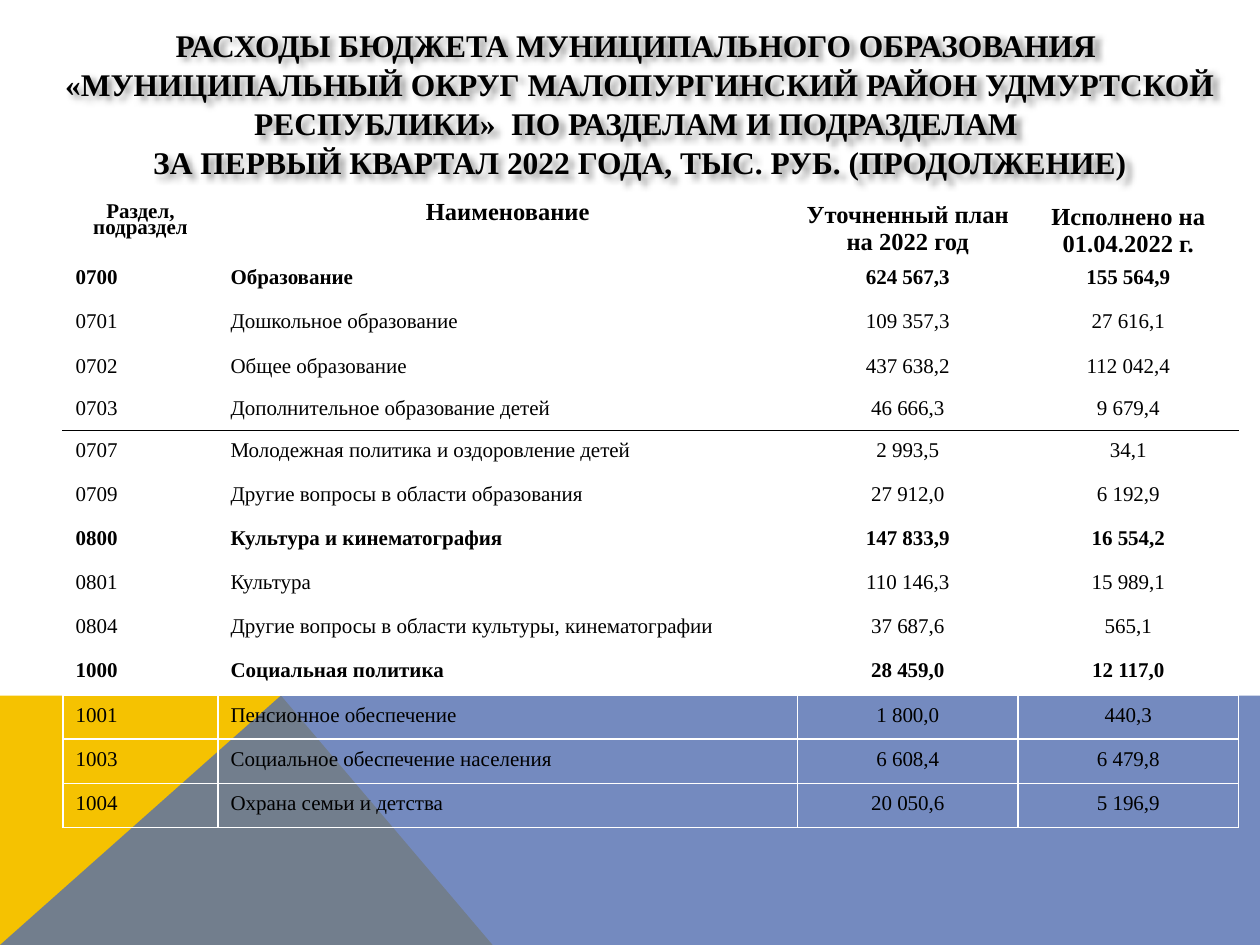
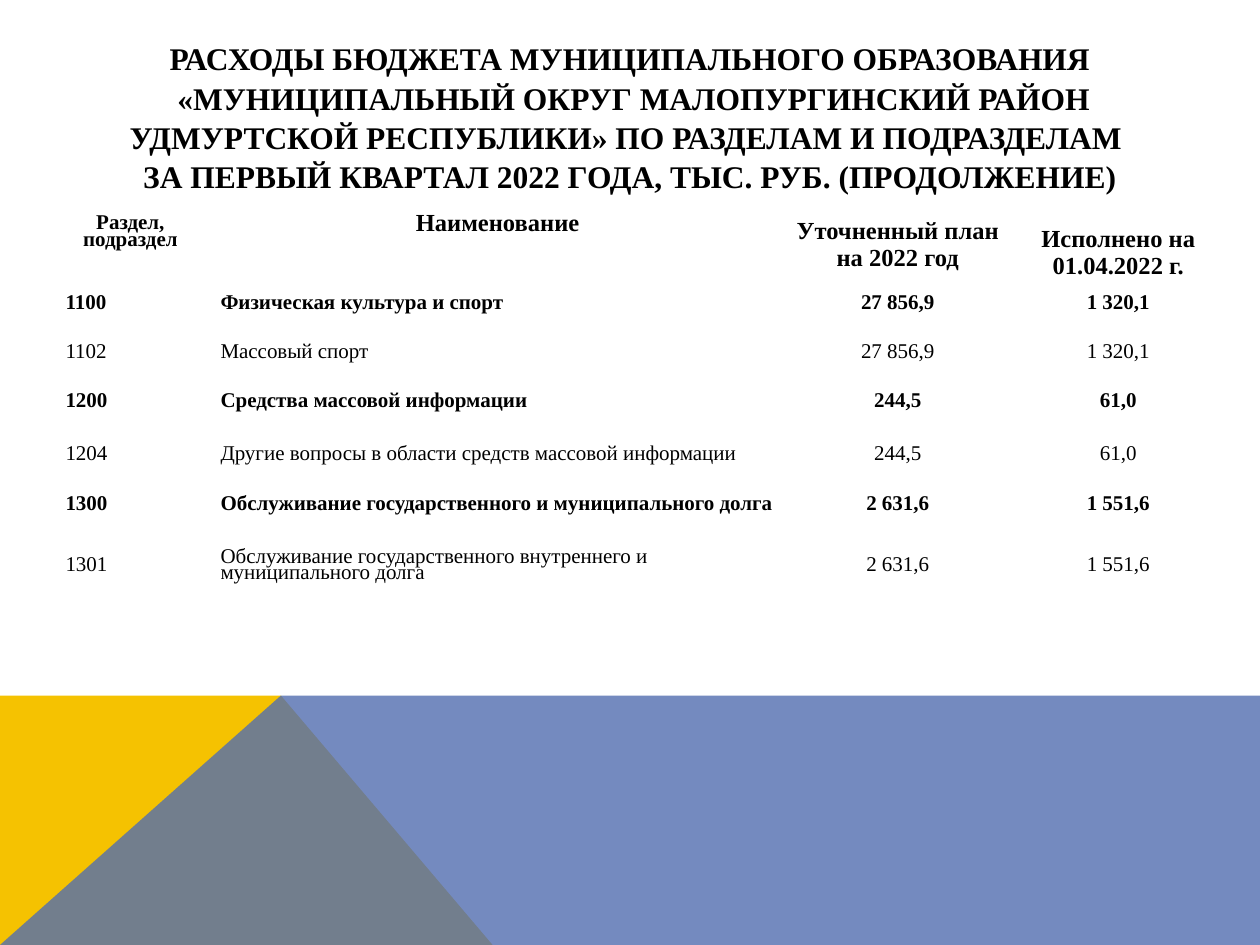
import dataclasses

import pptx
import pptx.dml.color
import pptx.enum.text
import pptx.oxml
import pptx.oxml.ns
import pptx.util
from pptx.util import Inches

ALIGN = pptx.enum.text.PP_ALIGN
ANCHOR = pptx.enum.text.MSO_ANCHOR


@dataclasses.dataclass(frozen=True)
class Theme:
    font: str = "Times New Roman"
    ink: str = "000000"
    paper: str = "FFFFFF"
    yellow: str = "F5C201"
    blue: str = "526DB0"
    blue_alpha: int = 80
    title_size: int = 18
    heading_size: int = 14
    body_size: int = 12
    title_spacing: float = 1.04
    tight_spacing: float = 0.7
    thin_line: int = 1
    thick_line: int = 3


THEME = Theme()
COLUMN_WIDTHS = (1.23, 4.6, 1.75, 1.75)

# Heading, type size, line spacing, anchor, whether the cell has margins
HEADINGS = (
    ("Раздел, подраздел", THEME.body_size, THEME.tight_spacing, ANCHOR.TOP, True),
    ("Наименование", THEME.heading_size, THEME.tight_spacing, ANCHOR.TOP, True),
    ("Уточненный план на 2022 год", THEME.heading_size, 1.0, ANCHOR.MIDDLE, False),
    ("Исполнено на 01.04.2022 г.", THEME.heading_size, 1.0, ANCHOR.BOTTOM, False),
)

SOCIAL_TITLE = (
    "РАСХОДЫ БЮДЖЕТА МУНИЦИПАЛЬНОГО ОБРАЗОВАНИЯ \v"
    "«МУНИЦИПАЛЬНЫЙ ОКРУГ МАЛОПУРГИНСКИЙ РАЙОН УДМУРТСКОЙ "
    "РЕСПУБЛИКИ»  ПО РАЗДЕЛАМ И ПОДРАЗДЕЛАМ \v"
    "ЗА ПЕРВЫЙ КВАРТАЛ 2022 ГОДА, ТЫС. РУБ. (ПРОДОЛЖЕНИЕ)"
)
SOCIAL_ROWS = (
    ("0700", "Образование", "624 567,3", "155 564,9"),
    ("0701", "Дошкольное образование", "109 357,3", "27 616,1"),
    ("0702", "Общее образование", "437 638,2", "112 042,4"),
    ("0703", "Дополнительное образование детей", "46 666,3", "9 679,4"),
    ("0707", "Молодежная политика и оздоровление детей", "2 993,5", "34,1"),
    ("0709", "Другие вопросы в области образования", "27 912,0", "6 192,9"),
    ("0800", "Культура и кинематография", "147 833,9", "16 554,2"),
    ("0801", "Культура", "110 146,3", "15 989,1"),
    ("0804", "Другие вопросы в области культуры, кинематографии", "37 687,6", "565,1"),
    ("1000", "Социальная политика", "28 459,0", "12 117,0"),
    ("1001", "Пенсионное обеспечение", "1 800,0", "440,3"),
    ("1003", "Социальное обеспечение населения", "6 608,4", "6 479,8"),
    ("1004", "Охрана семьи и детства", "20 050,6", "5 196,9"),
)
SOCIAL_HEIGHTS = (0.43,) + (0.35,) * 3 + (0.32,) + (0.35,) * 9

SPORT_TITLE = (
    "РАСХОДЫ БЮДЖЕТА МУНИЦИПАЛЬНОГО ОБРАЗОВАНИЯ\v"
    " «МУНИЦИПАЛЬНЫЙ ОКРУГ МАЛОПУРГИНСКИЙ РАЙОН УДМУРТСКОЙ "
    "РЕСПУБЛИКИ» ПО РАЗДЕЛАМ И ПОДРАЗДЕЛАМ \v"
    "ЗА ПЕРВЫЙ КВАРТАЛ 2022 ГОДА, ТЫС. РУБ. (ПРОДОЛЖЕНИЕ)"
)
SPORT_ROWS = (
    ("1100", "Физическая культура и спорт", "27 856,9", "1 320,1"),
    ("1102", "Массовый спорт", "27 856,9", "1 320,1"),
    ("1200", "Средства массовой информации", "244,5", "61,0"),
    ("1204", "Другие вопросы в области средств массовой информации", "244,5", "61,0"),
    ("1300", "Обслуживание государственного и муниципального долга", "2 631,6", "1 551,6"),
    ("1301", "Обслуживание государственного внутреннего и муниципального долга",
     "2 631,6", "1 551,6"),
)
SPORT_HEIGHTS = (0.55, 0.39, 0.39, 0.39, 0.45, 0.35, 0.61)


def rgb(color):
    return pptx.dml.color.RGBColor.from_string(color)


def parse_element(xml):
    return pptx.oxml.parse_xml(xml.replace(">", f' {pptx.oxml.ns.nsdecls("a")}>', 1))


def style_paragraph(para, size, bold, align, spacing):
    para.alignment = align
    para.line_spacing = spacing
    para.font.name = THEME.font
    para.font.size = pptx.util.Pt(size)
    para.font.bold = bold
    para.font.color.rgb = rgb(THEME.ink)


def add_polygon(page, points, color, alpha=100):
    points = [(Inches(x), Inches(y)) for x, y in points]
    builder = page.shapes.build_freeform(*points[0])
    builder.add_line_segments(points[1:], close=True)
    shape = builder.convert_to_shape()
    shape.shadow.inherit = False
    shape.line.fill.background()
    shape.fill.solid()
    shape.fill.fore_color.rgb = rgb(color)
    if alpha < 100:
        fill_color = shape.fill._xPr.find(".//" + pptx.oxml.ns.qn("a:srgbClr"))
        fill_color.append(parse_element(f'<a:alpha val="{alpha * 1000}"></a:alpha>'))


def add_band(page, box):
    """Yellow triangle under a translucent blue band."""
    left, top, width, height = box
    right, bottom = left + width, top + height
    peak = (left + 2.23, top)
    add_polygon(page, [(left, bottom), (left, top), peak, (left + 3.91, bottom)], THEME.yellow)
    add_polygon(page, [(left, bottom), peak, (right, top), (right, bottom)],
                THEME.blue, THEME.blue_alpha)


def add_title(page, box, text, shadow):
    title = page.shapes.add_textbox(*map(Inches, box))
    frame = title.text_frame
    frame.word_wrap = True
    frame.vertical_anchor = ANCHOR.MIDDLE
    para = frame.paragraphs[0]
    para.text = text
    style_paragraph(para, THEME.title_size, True, ALIGN.CENTER, THEME.title_spacing)
    if shadow:
        title.element.spPr.append(parse_element(
            '<a:effectLst><a:outerShdw blurRad="50800" dist="38100" dir="2700000" algn="tl">'
            f'<a:srgbClr val="{THEME.ink}"><a:alpha val="40000"/></a:srgbClr>'
            '</a:outerShdw></a:effectLst>'))


def set_borders(cell, top, bottom):
    """Each side is a (colour, points) pair; the left and right are thin and white."""
    side = (THEME.paper, THEME.thin_line)
    properties = cell._tc.get_or_add_tcPr()
    borders = (("lnL", side), ("lnR", side), ("lnT", top), ("lnB", bottom))
    for index, (tag, (color, points)) in enumerate(borders):
        properties.insert(index, parse_element(
            f'<a:{tag} w="{pptx.util.Pt(points)}"><a:solidFill><a:srgbClr val="{color}"/>'
            f'</a:solidFill></a:{tag}>'))


def fill_cell(cell, text, size, bold, align, spacing, anchor):
    cell.fill.background()
    cell.vertical_anchor = anchor
    para = cell.text_frame.paragraphs[0]
    para.text = text
    style_paragraph(para, size, bold, align, spacing)


def add_budget_table(page, corner, rows, heights, ruled_code=None):
    """Expense table; a black rule runs below the row with ruled_code."""
    size = (sum(COLUMN_WIDTHS), sum(heights))
    table = page.shapes.add_table(len(heights), len(COLUMN_WIDTHS),
                                  *map(Inches, corner + size)).table
    table.first_row = table.horz_banding = False
    for column, width in zip(table.columns, COLUMN_WIDTHS):
        column.width = Inches(width)
    for row, height in zip(table.rows, heights):
        row.height = Inches(height)

    thin = (THEME.paper, THEME.thin_line)
    thick = (THEME.paper, THEME.thick_line)
    rule = (THEME.ink, THEME.thin_line)

    # Heading row
    for index, (text, size, spacing, anchor, margins) in enumerate(HEADINGS):
        cell = table.cell(0, index)
        fill_cell(cell, text, size, True, ALIGN.CENTER, spacing, anchor)
        if not margins:
            cell.margin_left = cell.margin_right = cell.margin_top = cell.margin_bottom = 0
        set_borders(cell, thin, thick)

    # Data rows: sections end in 00 and are bold
    top = thick
    for row_index, values in enumerate(rows, 1):
        code = values[0]
        bottom = rule if code == ruled_code else thin
        for index, text in enumerate(values):
            cell = table.cell(row_index, index)
            align = ALIGN.LEFT if index < 2 else ALIGN.CENTER
            fill_cell(cell, text, THEME.body_size, code.endswith("00"), align,
                      THEME.tight_spacing, ANCHOR.MIDDLE)
            set_borders(cell, top, bottom)
        top = bottom


def add_budget_page(deck, title, title_box, corner, rows, heights,
                    title_shadow=False, ruled_code=None):
    page = deck.slides.add_slide(deck.slide_layouts[6])
    add_band(page, (0, 5.52, 10, 1.98))
    add_title(page, title_box, title, title_shadow)
    add_budget_table(page, corner, rows, heights, ruled_code)


def main():
    deck = pptx.Presentation()
    deck.slide_width, deck.slide_height = Inches(10), Inches(7.5)
    add_budget_page(deck, SOCIAL_TITLE, (0.33, 0.3, 9.5, 1.03), (0.5, 1.58),
                    SOCIAL_ROWS, SOCIAL_HEIGHTS, title_shadow=True, ruled_code="0703")
    add_budget_page(deck, SPORT_TITLE, (0.5, 0.3, 9, 1.25), (0.42, 1.67),
                    SPORT_ROWS, SPORT_HEIGHTS)
    deck.save("out.pptx")


if __name__ == "__main__":
    main()
